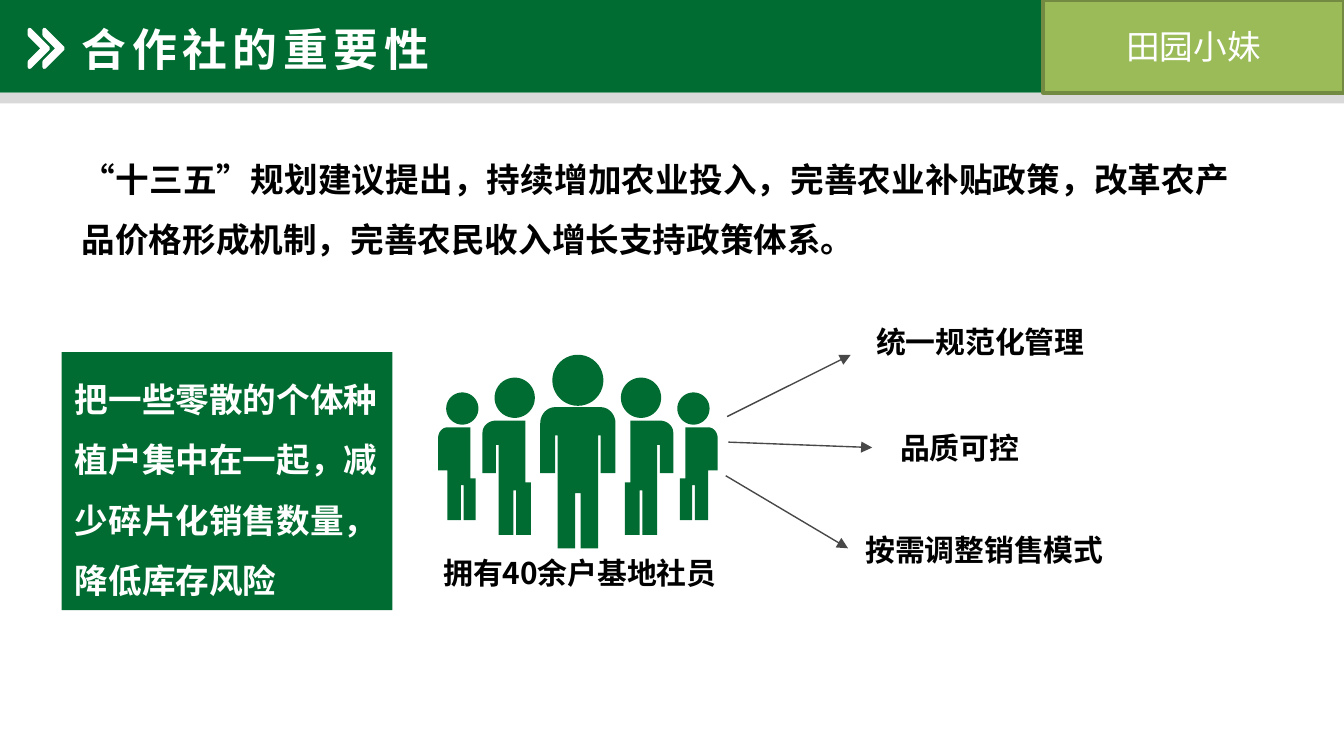
from math import cos, sin, pi
from pptx import Presentation
from pptx.dml.color import RGBColor
from pptx.enum.lang import MSO_LANGUAGE_ID
from pptx.enum.shapes import MSO_CONNECTOR, MSO_SHAPE
from pptx.enum.text import MSO_ANCHOR, PP_ALIGN
from pptx.oxml.ns import qn
from pptx.util import Inches, Pt
from lxml.etree import SubElement

GREEN, WHITE, BLACK = "006C31", "FFFFFF", "000000"
SANS = "Noto Sans CJK SC"
WIDE = 10
HIGH = WIDE * 9 / 16


def color(code):
    return RGBColor.from_string(code)


def paint(shape, fill, line=None):
    shape.shadow.inherit = False
    shape.fill.solid()
    shape.fill.fore_color.rgb = color(fill)
    if line:
        shape.line.color.rgb = color(line)
        shape.line.width = Pt(2)
    else:
        shape.line.fill.background()


def add_box(slide, box, fill, line=None, kind=MSO_SHAPE.RECTANGLE):
    shape = slide.shapes.add_shape(kind, *map(Inches, box))
    paint(shape, fill, line)
    return shape


def write(shape, text, size, ink, bold=True, font=SANS, space=None,
          align=PP_ALIGN.LEFT, anchor=MSO_ANCHOR.TOP, track=None):
    frame = shape.text_frame
    frame.word_wrap = True
    frame.vertical_anchor = anchor
    para = frame.paragraphs[0]
    para.alignment = align
    if space:
        para.line_spacing = space
    run = para.add_run()
    run.text = text
    run.font.size = Pt(size)
    run.font.bold = bold
    run.font.name = font
    run.font.color.rgb = color(ink)
    run.font.language_id = MSO_LANGUAGE_ID.SIMPLIFIED_CHINESE
    props = run._r.get_or_add_rPr()
    SubElement(props, qn("a:ea")).set("typeface", SANS)
    if track:
        props.set("spc", str(track * 100))


def add_text(slide, box, text, size, ink=BLACK, **style):
    write(slide.shapes.add_textbox(*map(Inches, box)), text, size, ink, **style)


def add_outline(slide, left, top, loops, fill, line=None):
    """Draw closed loops of points, given from (left, top), as one shape."""
    loops = [[(Inches(left + x), Inches(top + y)) for x, y in loop] for loop in loops]
    pen = slide.shapes.build_freeform(*loops[0][0], scale=1.0)
    pen.add_line_segments(loops[0][1:], close=True)
    for loop in loops[1:]:
        pen.move_to(*loop[0])
        pen.add_line_segments(loop[1:], close=True)
    paint(pen.convert_to_shape(), fill, line)


def add_header(slide, left, top, width):
    high, split = 0.69, 7.76
    add_box(slide, (left, top, split, high), GREEN)
    add_box(slide, (left, top + high, width, 0.08), "D9D9D9")
    add_text(slide, (left + 0.51, top + 0.11, 3.8, 0.5), "合作社的重要性", 24, WHITE, track=3)
    # Double chevron
    chevron = [(0, 0), (0, 0.04), (0.1, 0.14), (0, 0.24), (0, 0.28), (0.14, 0.14)]
    for x in (0.33, 0.22):
        add_outline(slide, left + x, top + 0.22, [chevron], WHITE, WHITE)
    # Name tag
    tag = add_box(slide, (left + split, top, width - split, high), "9BBB59", "738A42",
                  MSO_SHAPE.FLOWCHART_PROCESS)
    write(tag, "田园小妹", 18, WHITE, bold=False, font="Calibri",
          align=PP_ALIGN.CENTER, anchor=MSO_ANCHOR.MIDDLE)


def head(x, y, r):
    turns = [2 * pi * i / 40 for i in range(40)]
    return [(x + r * cos(t), y + r * sin(t)) for t in turns]


def body(legs, arm, neck, side):
    """Join legs and side with a round shoulder from arm to neck."""
    (ax, ay), (nx, ny) = arm, neck
    turns = [pi / 2 * i / 10 for i in range(11)]
    curve = [(nx - (nx - ax) * cos(t), ay - (ay - ny) * sin(t)) for t in turns]
    return legs + curve + side


def add_people(slide, left, top, width):
    def flip(loop):
        return [(width - x, y) for x, y in reversed(loop)]

    mid = width / 2
    outer = body([(0.28, 0.92), (0.28, 1.23), (0.19, 1.23), (0.19, 0.97), (0.17, 0.97),
                  (0.17, 1.23), (0.07, 1.23), (0.07, 0.86), (0, 0.86)],
                 (0, 0.62), (0.07, 0.54), [(0.24, 0.54), (0.24, 0.92)])
    inner = body([(0.69, 0.95), (0.69, 1.34), (0.58, 1.34), (0.58, 1.01), (0.56, 1.01),
                  (0.56, 1.34), (0.45, 1.34), (0.45, 0.67), (0.43, 0.67), (0.43, 0.88),
                  (0.33, 0.88)],
                 (0.33, 0.58), (0.43, 0.49), [(0.65, 0.49), (0.65, 0.95)])
    half = body([(1.02, 1.03), (1.02, 1.44), (0.89, 1.44), (0.89, 0.6), (0.87, 0.6),
                 (0.87, 0.88), (0.76, 0.88)],
                (0.76, 0.51), (0.87, 0.39), [])
    pairs = [outer, head(0.18, 0.4, 0.12), inner, head(0.57, 0.32, 0.15)]
    loops = [head(mid, 0.19, 0.19), half + flip(half)]
    loops += pairs + [flip(loop) for loop in pairs]
    add_outline(slide, left, top, loops, GREEN)
    add_text(slide, (left - 0.06, top + 1.44, 2.27, 0.37), "拥有40余户基地社员", 16)


def add_arrow(slide, start, end):
    arrow = slide.shapes.add_connector(MSO_CONNECTOR.STRAIGHT, *map(Inches, start + end))
    arrow.line.color.rgb = color("484849")
    arrow.line.width = Pt(0.75)
    SubElement(arrow.line._get_or_add_ln(), qn("a:tailEnd")).set("type", "triangle")
    SubElement(arrow._element.spPr, qn("a:effectLst"))


def add_gains(slide, left, top):
    # Arrow start, arrow end, label corner, label width, label
    gains = [
        ((0.01, 0.74), (0.93, 0.28), (1.02, 0), 1.77, "统一规范化管理"),
        ((0.02, 0.93), (1.09, 0.97), (1.2, 0.79), 1.1, "品质可控"),
        ((0, 1.18), (0.91, 1.72), (0.94, 1.55), 2.68, "按需调整销售模式"),
    ]
    for start, end, (x, y), width, label in gains:
        add_arrow(slide, *[(left + a, top + b) for a, b in (start, end)])
        add_text(slide, (left + x, top + y, width, 0.37), label, 16)


def main():
    deck = Presentation()
    deck.slide_width, deck.slide_height = Inches(WIDE), Inches(HIGH)
    slide = deck.slides.add_slide(deck.slide_layouts[6])
    add_header(slide, 0, 0, WIDE)
    # Policy statement
    add_text(slide, (0.51, 0.98, 8.74, 1.01),
             "“十三五”规划建议提出，持续增加农业投入，完善农业补贴政策，改革农产品价格形成机制，"
             "完善农民收入增长支持政策体系。", 18, space=1.5, align=PP_ALIGN.JUSTIFY)
    # Purpose panel
    panel = add_box(slide, (0.46, 2.62, 2.46, 1.92), GREEN)
    write(panel, "把一些零散的个体种植户集中在一起，减少碎片化销售数量，降低库存风险",
          18, WHITE, space=1.5)
    # Members and what they gain
    add_people(slide, 3.26, 2.64, 2.08)
    add_gains(slide, 5.4, 2.36)
    deck.save("out.pptx")


if __name__ == "__main__":
    main()
